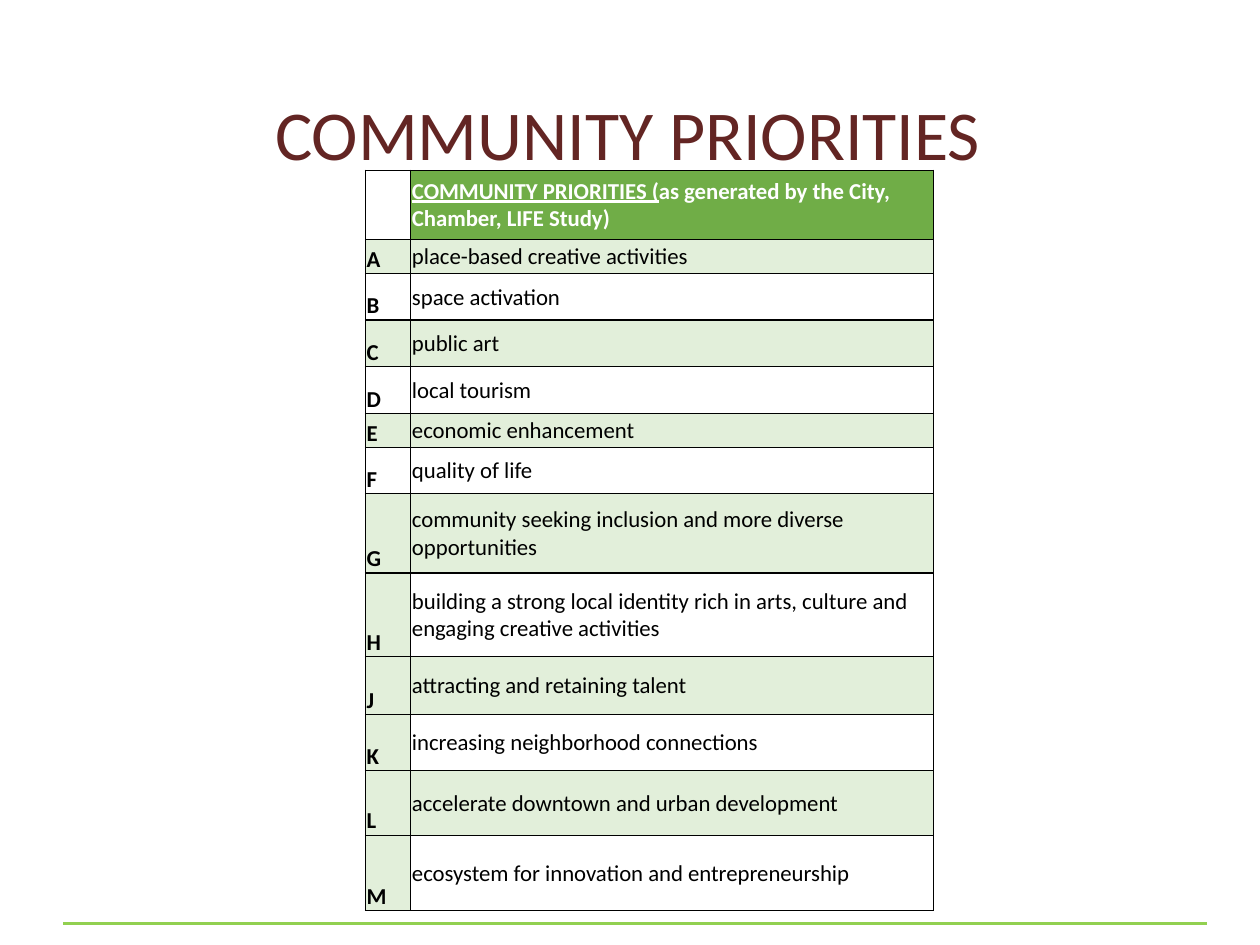
import pptx
import pptx.dml.color
import pptx.enum.text
import pptx.oxml
import pptx.oxml.ns
import pptx.util
from pptx.util import Inches

RGBColor = pptx.dml.color.RGBColor
MAROON = RGBColor(0x63, 0x25, 0x23)
LIME = RGBColor(0x92, 0xD0, 0x50)
HEADER_GREEN = RGBColor(0x70, 0xAD, 0x47)
PALE_GREEN = RGBColor(0xE2, 0xEF, 0xDA)
BLACK = RGBColor(0x00, 0x00, 0x00)
WHITE = RGBColor(0xFF, 0xFF, 0xFF)
FONT = "Calibri"
ANCHOR = pptx.enum.text.MSO_ANCHOR

COLUMN_WIDTHS = [0.36, 4.15]
HEADER_HEIGHT = 0.55
HEADER_RUNS = ["COMMUNITY PRIORITIES (", "as generated by the City, Chamber, LIFE Study)"]
# Letter, priority, row height in inches
PRIORITIES = [
    ("A", "place-based creative activities", 0.27),
    ("B", "space activation", 0.37),
    ("C", "public art", 0.37),
    ("D", "local tourism", 0.37),
    ("E", "economic enhancement", 0.27),
    ("F", "quality of life", 0.37),
    ("G", "community seeking inclusion and more diverse opportunities", 0.63),
    ("H", "building a strong local identity rich in arts, culture and engaging creative activities", 0.66),
    ("J", "attracting and retaining talent", 0.46),
    ("K", "increasing neighborhood connections", 0.45),
    ("L", "accelerate downtown and urban development", 0.51),
    ("M", "ecosystem for innovation and entrepreneurship", 0.6),
]


def add_footer_line(slide, left, top, width):
    line = slide.shapes.add_connector(
        pptx.enum.shapes.MSO_CONNECTOR.STRAIGHT, left, top, left + width, top)
    line.line.color.rgb = LIME
    line.line.width = pptx.util.Pt(1.5)
    line._element.spPr.append(pptx.oxml.parse_xml(
        f'<a:effectLst {pptx.oxml.ns.nsdecls("a")}/>'))


def fill_title(slide, left, top, width, height):
    title = slide.shapes.title
    title.left, title.top, title.width, title.height = left, top, width, height
    text_frame = title.text_frame
    text_frame.text = "COMMUNITY PRIORITIES "
    text_frame.vertical_anchor = ANCHOR.MIDDLE
    paragraph = text_frame.paragraphs[0]
    paragraph.alignment = pptx.enum.text.PP_ALIGN.CENTER
    font = paragraph.runs[0].font
    font.name, font.size = FONT, pptx.util.Pt(40)
    font.color.rgb = MAROON


def format_cell(cell, fill_color, anchor):
    cell.margin_left = cell.margin_right = cell.margin_top = Inches(0.01)
    cell.margin_bottom = 0
    cell.vertical_anchor = anchor
    # Borders come before the fill in the cell properties
    properties = cell._tc.get_or_add_tcPr()
    for side in ("lnL", "lnR", "lnT", "lnB"):
        properties.append(pptx.oxml.parse_xml(
            f'<a:{side} {pptx.oxml.ns.nsdecls("a")} w="{pptx.util.Pt(0.75)}">'
            f'<a:solidFill><a:srgbClr val="{BLACK}"/></a:solidFill></a:{side}>'))
    if fill_color is None:
        cell.fill.background()
    else:
        cell.fill.solid()
        cell.fill.fore_color.rgb = fill_color


def write_cell(cell, texts, color, bold):
    paragraph = cell.text_frame.paragraphs[0]
    for text in texts:
        run = paragraph.add_run()
        run.text = text
        run.font.name, run.font.size = FONT, pptx.util.Pt(13)
        run.font.bold = bold
        run.font.color.rgb = color


def add_priorities_table(slide, left, top):
    heights = [HEADER_HEIGHT] + [height for _, _, height in PRIORITIES]
    table = slide.shapes.add_table(
        len(heights), len(COLUMN_WIDTHS), left, top,
        Inches(sum(COLUMN_WIDTHS)), Inches(sum(heights))).table
    for column, width in zip(table.columns, COLUMN_WIDTHS):
        column.width = Inches(width)
    for row, height in zip(table.rows, heights):
        row.height = Inches(height)

    # Header row
    format_cell(table.cell(0, 0), None, ANCHOR.MIDDLE)
    header = table.cell(0, 1)
    format_cell(header, HEADER_GREEN, ANCHOR.MIDDLE)
    write_cell(header, HEADER_RUNS, WHITE, True)
    header.text_frame.paragraphs[0].runs[0].font.underline = True

    # Banded rows; from G on, every letter cell is shaded
    for row_number, (letter, priority, _) in enumerate(PRIORITIES, start=1):
        band = PALE_GREEN if row_number % 2 else None
        letter_cell, priority_cell = table.cell(row_number, 0), table.cell(row_number, 1)
        format_cell(letter_cell, PALE_GREEN if letter >= "G" else band, ANCHOR.BOTTOM)
        write_cell(letter_cell, [letter], BLACK, True)
        format_cell(priority_cell, band, ANCHOR.MIDDLE)
        write_cell(priority_cell, [priority], BLACK, False)


def main():
    presentation = pptx.Presentation()
    presentation.slide_width, presentation.slide_height = Inches(10), Inches(7.5)
    slide = presentation.slides.add_slide(presentation.slide_layouts[5])
    add_footer_line(slide, Inches(0.5), Inches(7.33), Inches(9.08))
    fill_title(slide, Inches(0.17), Inches(0.39), Inches(9.75), Inches(1.33))
    add_priorities_table(slide, Inches(2.9), Inches(1.35))
    presentation.save("out.pptx")


if __name__ == "__main__":
    main()
